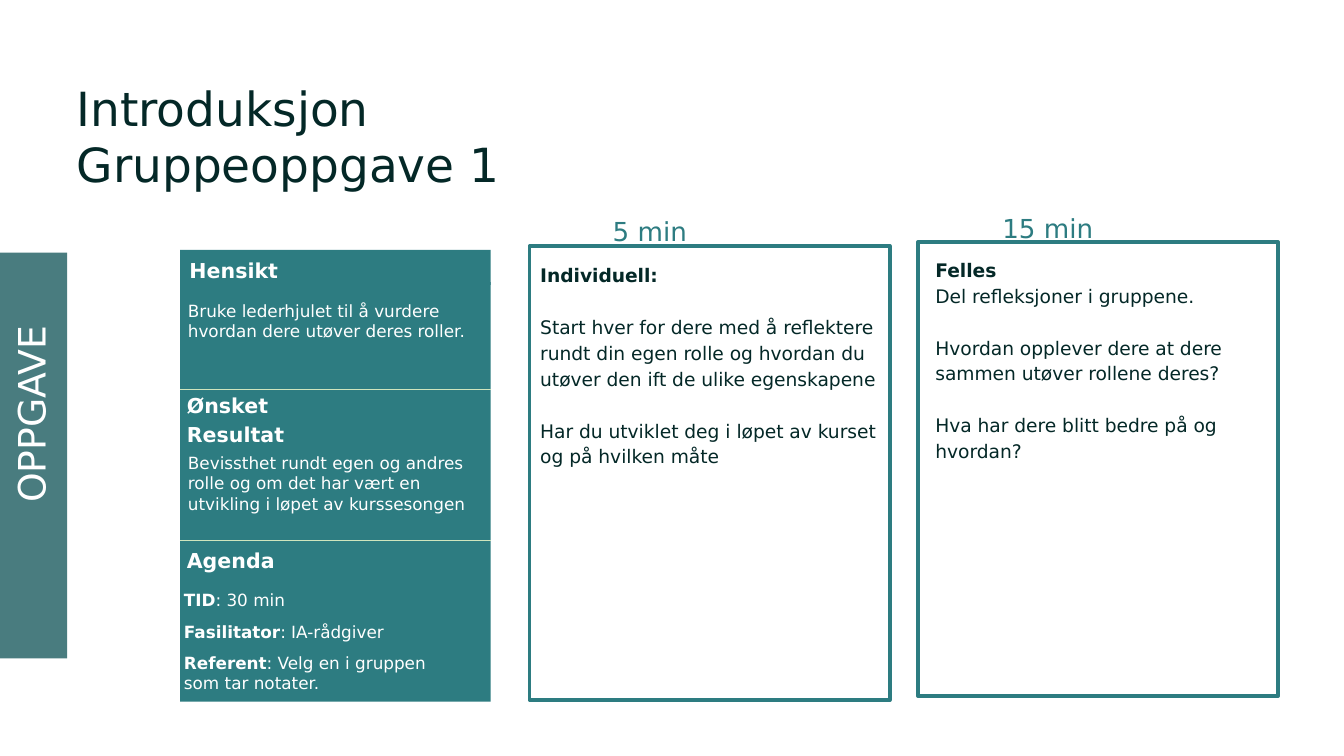
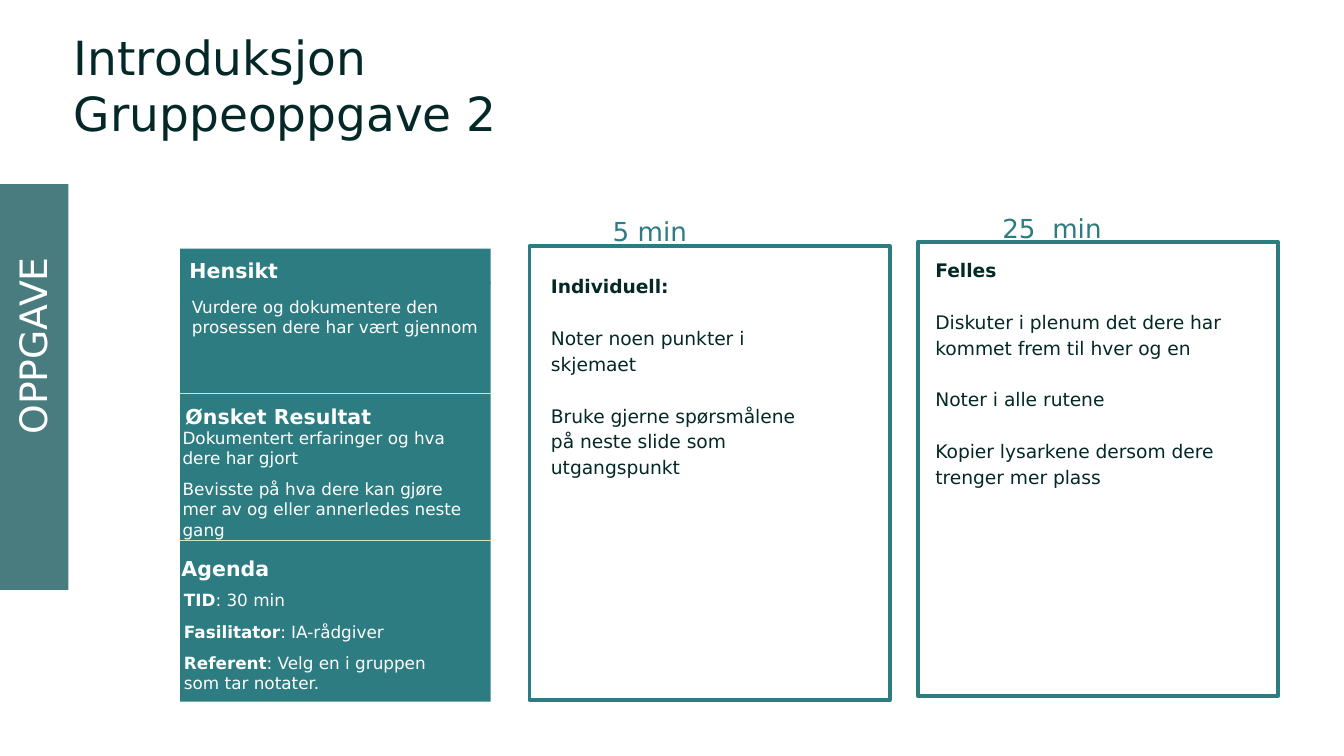
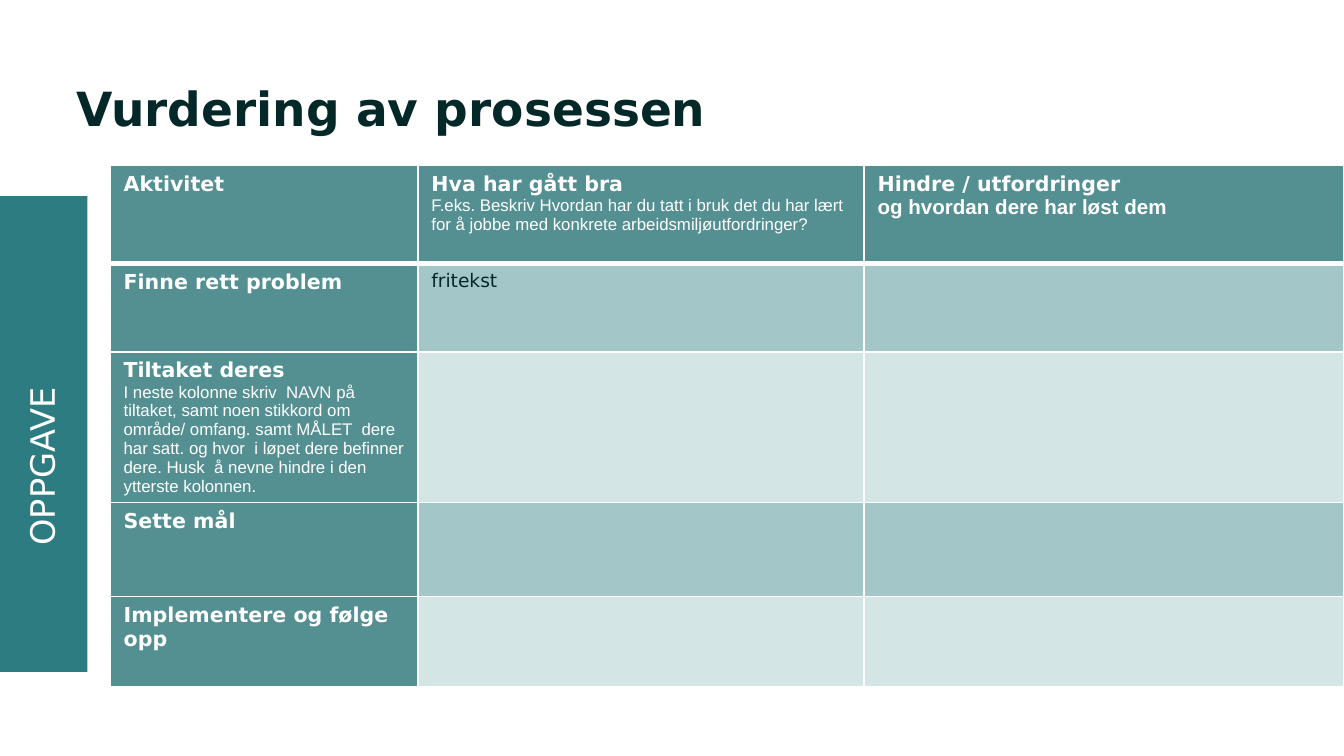
"""Build three Norwegian group-task slides: two task sheets and an assessment table."""
from lxml.etree import SubElement
from pptx import Presentation
from pptx.dml.color import RGBColor
from pptx.enum.shapes import MSO_CONNECTOR, MSO_SHAPE
from pptx.enum.text import MSO_ANCHOR, MSO_AUTO_SIZE, PP_ALIGN
from pptx.oxml.ns import qn
from pptx.util import Inches, Pt

TEAL = RGBColor(0x2D, 0x7C, 0x81)
SLATE = RGBColor(0x49, 0x7C, 0x7F)
INK = RGBColor(0x04, 0x28, 0x27)
WHITE = RGBColor(0xFF, 0xFF, 0xFF)
PALE_GREEN = RGBColor(0xCF, 0xE5, 0xBD)
HEAD_FILL = RGBColor(0x54, 0x8F, 0x92)
BAND_FILLS = (RGBColor(0xA3, 0xC7, 0xC9), RGBColor(0xD4, 0xE5, 0xE6))
FONT = "DejaVu Sans"
NOTE_FONT = "Arial"

PANEL_LEFT, PANEL_WIDTH = 1.34, 2.31
BOX_WIDTH, BOX_HEIGHT = 2.68, 3.38
LINE_GAP = 14

AGENDA = [("TID", ": 30 min"), ("Fasilitator", ": IA-rådgiver"),
          ("Referent", ": Velg en i gruppen som tar notater.")]
BOX_PLACES = [(3.94, 1.83), (6.83, 1.8)]
TIME_PLACES = [(4.46, 1.55), (7.36, 1.53)]

TASKS = [
    {
        "title": "Introduksjon\vGruppeoppgave 1",
        "title_at": (0.47, 0.49),
        "side": (-0.01, 1.88),
        "strip_top": 1.86,
        "rules": (2.9, 4.02),
        "headings": [("Hensikt", (1.41, 1.87, 1.84, 0.23)),
                     ("Ønsket Resultat", (1.39, 3.05, 1.35, 0.27)),
                     ("Agenda", (1.39, 3.99, 1.75, 0.27))],
        "details": [
            (AGENDA, (1.27, 4.34, 2.29, 0.88)),
            (["Bruke lederhjulet til å vurdere hvordan dere utøver deres roller."],
             (1.3, 2.19, 2.4, 0.4)),
            (["Bevissthet rundt egen og andres rolle og om det har vært en "
              "utvikling i løpet av kurssesongen"], (1.3, 3.32, 2.29, 0.56)),
        ],
        "times": ("5 min", "15 min"),
        "steps": [
            ([("Individuell:", ""),
              "Start hver for dere med å reflektere rundt din egen rolle og "
              "hvordan du utøver den ift de ulike egenskapene",
              "Har du utviklet deg i løpet av kurset og på hvilken måte"],
             (3.91, 1.84, 2.82, 2.97), (1, 2)),
            ([("Felles", ""), "Del refleksjoner i gruppene.",
              "Hvordan opplever dere at dere sammen utøver rollene deres?",
              "Hva har dere blitt bedre på og hvordan?"],
             (6.85, 1.8, 2.68, 3.21), (2, 3)),
        ],
    },
    {
        "title": "Introduksjon\vGruppeoppgave 2",
        "title_at": (0.45, 0.11),
        "side": (0, 1.37),
        "strip_top": 1.85,
        "rules": (2.93, 4.02),
        "headings": [("Hensikt", (1.41, 1.87, 1.84, 0.23)),
                     ("Ønsket Resultat", (1.38, 2.93, 1.67, 0.26)),
                     ("Agenda", (1.35, 4.05, 1.75, 0.27))],
        "details": [
            (AGENDA, (1.27, 4.34, 2.29, 0.88)),
            (["Vurdere og dokumentere den prosessen dere har vært gjennom"],
             (1.33, 2.16, 2.4, 0.4)),
            (["Dokumentert erfaringer og hva dere har gjort",
              "Bevisste på hva dere kan gjøre mer av og eller annerledes neste gang"],
             (1.26, 3.13, 2.29, 0.94)),
        ],
        "times": ("5 min", "25  min"),
        "steps": [
            ([("Individuell:", ""), "Noter noen punkter i skjemaet",
              "Bruke gjerne spørsmålene på neste slide som utgangspunkt"],
             (3.99, 1.92, 2.17, 2.97), (1, 2)),
            ([("Felles", ""),
              "Diskuter i plenum det dere har kommet frem til hver og en",
              "Noter i alle rutene",
              "Kopier lysarkene dersom dere trenger mer plass"],
             (6.85, 1.8, 2.68, 3.21), (1, 2, 3)),
        ],
    },
]

ASSESSMENT_TITLE = "Vurdering av prosessen"
COLUMN_WIDTHS = (2.29, 3.32, 3.57)
ROW_HEIGHTS = (0.73, 0.66, 1.12, 0.7, 0.67)
ASSESSMENT = [
    ["Aktivitet",
     "Hva har gått bra\vF.eks. Beskriv Hvordan har du tatt i bruk det du har lært for å "
     "jobbe med konkrete arbeidsmiljøutfordringer?",
     "Hindre / utfordringer\nog hvordan dere har løst dem"],
    ["Finne rett problem", "fritekst", ""],
    ["Tiltaket deres\vI neste kolonne skriv  NAVN på tiltaket, samt noen stikkord om "
     "område/ omfang. samt MÅLET  dere har satt. og hvor  i løpet dere befinner dere. "
     "Husk  å nevne hindre i den ytterste kolonnen.", "", ""],
    ["Sette mål", "", ""],
    ["Implementere og følge opp", "", ""],
]
BOLD_NOTE_CELL = (0, 2)


def inches(*lengths):
    return [Inches(length) for length in lengths]


def style(run, size, color, bold=False, font=FONT):
    run.font.size, run.font.name, run.font.bold = Pt(size), font, bold
    run.font.color.rgb = color


def set_insets(frame, left, top, right, bottom):
    frame.margin_left, frame.margin_top, frame.margin_right, frame.margin_bottom = inches(
        left, top, right, bottom)


def add_text(slide, place, paragraphs, size, color, insets=(0.1, 0.05, 0.1, 0.05)):
    """Add a text box; a pair is a bold lead and its plain continuation."""
    frame = slide.shapes.add_textbox(*inches(*place)).text_frame
    frame.word_wrap = True
    set_insets(frame, *insets)
    for index, content in enumerate(paragraphs):
        paragraph = frame.paragraphs[0] if index == 0 else frame.add_paragraph()
        lead, rest = content if isinstance(content, tuple) else ("", content)
        for text, bold in ((lead, True), (rest, False)):
            if text:
                run = paragraph.add_run()
                run.text = text
                style(run, size, color, bold)
    return frame


def add_rectangle(slide, place, fill=None, outline=None):
    rectangle = slide.shapes.add_shape(MSO_SHAPE.RECTANGLE, *inches(*place))
    rectangle.shadow.inherit = False
    if fill is None:
        rectangle.fill.background()
    else:
        rectangle.fill.solid()
        rectangle.fill.fore_color.rgb = fill
    if outline is None:
        rectangle.line.fill.background()
    else:
        rectangle.line.color.rgb, rectangle.line.width = outline, Pt(2)
    return rectangle


def add_rule(slide, y):
    rule = slide.shapes.add_connector(
        MSO_CONNECTOR.STRAIGHT, *inches(PANEL_LEFT, y, PANEL_LEFT + PANEL_WIDTH, y))
    rule.line.color.rgb, rule.line.width = PALE_GREEN, Pt(0.75)
    SubElement(rule._element.spPr, qn("a:effectLst"))


def add_titled_slide(deck, text, place, bold=False):
    slide = deck.slides.add_slide(deck.slide_layouts[5])
    title = slide.shapes.title
    title.left, title.top, title.width, title.height = inches(*place, 9.06, 0.63)
    frame = title.text_frame
    frame.text = text
    frame.word_wrap, frame.auto_size = True, MSO_AUTO_SIZE.NONE
    frame.vertical_anchor = MSO_ANCHOR.TOP
    set_insets(frame, 0.1, 0.1, 0.1, 0.1)
    frame.paragraphs[0].alignment = PP_ALIGN.LEFT
    for run in frame.paragraphs[0].runs:
        style(run, 25.2, INK, bold)
    return slide


def add_side_label(slide, band, label, fill, size, alignment):
    add_rectangle(slide, band, fill)
    tab = add_rectangle(slide, label, fill)
    tab.rotation = 270
    frame = tab.text_frame
    frame.text = "OPPGAVE"
    frame.vertical_anchor = MSO_ANCHOR.TOP
    frame.paragraphs[0].alignment = alignment
    style(frame.paragraphs[0].runs[0], size, WHITE)


def add_task(deck, task):
    slide = add_titled_slide(deck, task["title"], task["title_at"])
    add_rectangle(slide, (PANEL_LEFT, 2.1, PANEL_WIDTH, 3.12), TEAL)
    add_rectangle(slide, (PANEL_LEFT, task["strip_top"], PANEL_WIDTH, 0.26), TEAL)
    for heading, place in task["headings"]:
        frame = add_text(slide, place, [(heading, "")], 11, WHITE, (0, 0.01, 0, 0))
        frame.vertical_anchor = MSO_ANCHOR.BOTTOM
        frame.paragraphs[0].line_spacing = 1.15
    for paragraphs, place in task["details"]:
        frame = add_text(slide, place, paragraphs, 9, WHITE)
        for paragraph in frame.paragraphs:
            paragraph.space_before = paragraph.space_after = Pt(3)
    for corner, (paragraphs, place, spaced) in zip(BOX_PLACES, task["steps"]):
        add_rectangle(slide, (*corner, BOX_WIDTH, BOX_HEIGHT), outline=TEAL)
        frame = add_text(slide, place, paragraphs, 10, INK, (0.11, 0.1, 0.1, 0.1))
        for index, paragraph in enumerate(frame.paragraphs):
            paragraph.line_spacing = 1.15
            paragraph.space_before = Pt(LINE_GAP if index in spaced else 0)
    for corner, time in zip(TIME_PLACES, task["times"]):
        add_text(slide, (*corner, 1.04, 0.34), [time], 14, TEAL)
    for y in task["rules"]:
        add_rule(slide, y)
    left, top = task["side"]
    add_side_label(slide, (left, top, 0.51, 3.02), (left - 0.65, top + 0.85, 1.78, 0.44),
                   SLATE, 20.2, PP_ALIGN.LEFT)


def set_borders(cell, header):
    properties = cell._tc.get_or_add_tcPr()
    for index, side in enumerate(("lnL", "lnR", "lnT", "lnB")):
        width = 3 if header and side == "lnB" else 1
        border = properties.makeelement(qn("a:" + side), {"w": str(Pt(width))})
        SubElement(SubElement(border, qn("a:solidFill")), qn("a:srgbClr"), val=str(WHITE))
        properties.insert(index, border)


def add_assessment(deck):
    slide = add_titled_slide(deck, ASSESSMENT_TITLE, (0.47, 0.49), bold=True)
    table = slide.shapes.add_table(
        len(ROW_HEIGHTS), len(COLUMN_WIDTHS),
        *inches(0.82, 1.23, sum(COLUMN_WIDTHS), sum(ROW_HEIGHTS))).table
    for column, width in zip(table.columns, COLUMN_WIDTHS):
        column.width = Inches(width)
    for row, height in zip(table.rows, ROW_HEIGHTS):
        row.height = Inches(height)
    for r, texts in enumerate(ASSESSMENT):
        for c, text in enumerate(texts):
            cell = table.cell(r, c)
            heading = r == 0 or c == 0
            cell.text = text
            cell.fill.solid()
            cell.fill.fore_color.rgb = HEAD_FILL if heading else BAND_FILLS[(r - 1) % 2]
            set_borders(cell, r == 0)
            runs = [run for paragraph in cell.text_frame.paragraphs for run in paragraph.runs]
            for index, run in enumerate(runs):
                if not heading:
                    style(run, 10, INK)
                elif index == 0:
                    style(run, 11, WHITE, True)
                else:
                    strong = (r, c) == BOLD_NOTE_CELL
                    style(run, 11 if strong else 9, WHITE, strong, NOTE_FONT)
    add_side_label(slide, (0, 1.46, 0.65, 3.54), (-0.76, 3.27, 2.14, 0.4),
                   TEAL, 18, PP_ALIGN.CENTER)


def main():
    deck = Presentation()
    deck.slide_width = Inches(10)
    deck.slide_height = deck.slide_width * 9 // 16
    for task in TASKS:
        add_task(deck, task)
    add_assessment(deck)
    deck.save("out.pptx")


if __name__ == "__main__":
    main()
